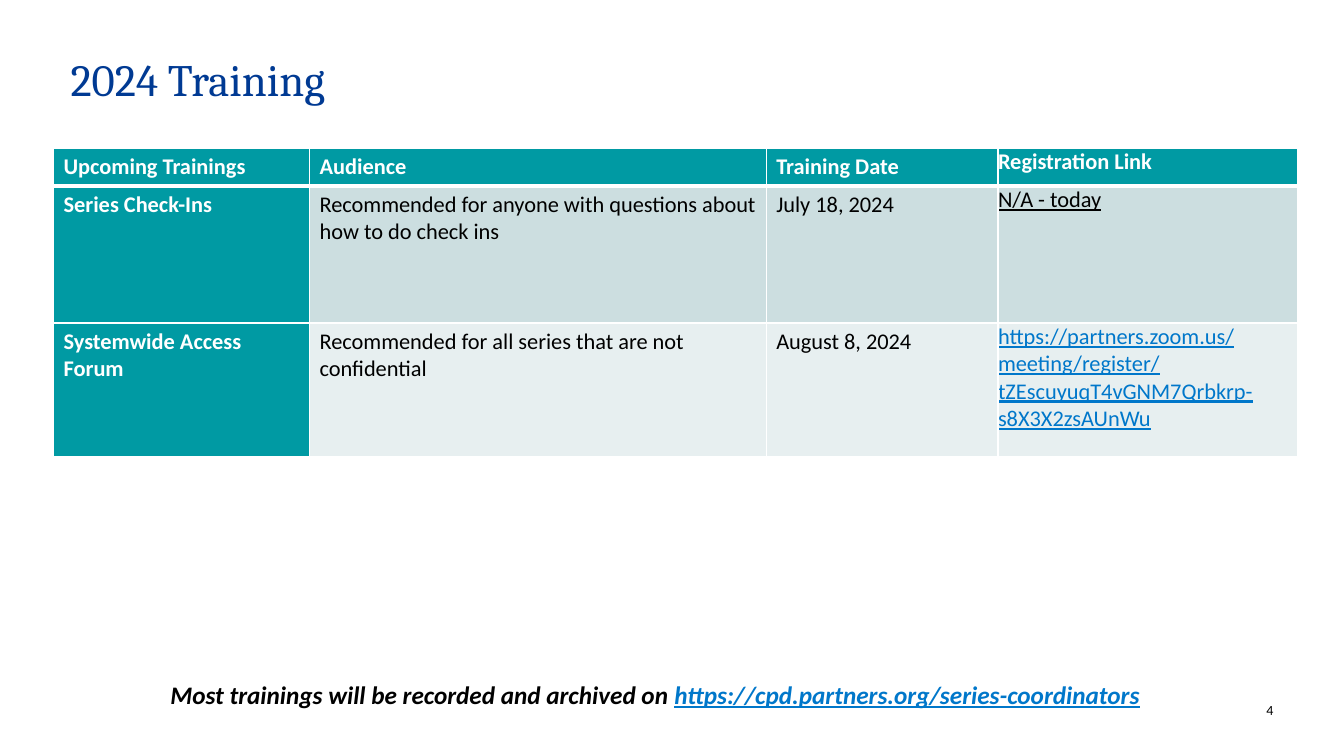
from dataclasses import dataclass

import pptx
import pptx.dml.color
import pptx.enum.text
import pptx.oxml.ns
import pptx.util
from lxml import etree


@dataclass(frozen=True)
class Theme:
    title_font: str = "Cambria"
    body_font: str = "Calibri"
    title_size: int = 32
    note_size: int = 18
    table_size: int = 16
    number_size: int = 10
    navy: str = "003A93"
    teal: str = "009AA3"
    bands: tuple[str, str] = ("CCDEE0", "E7EFF0")
    link: str = "0077CA"
    black: str = "000000"
    white: str = "FFFFFF"


@dataclass(frozen=True)
class Box:
    """Place on the slide, in percent of its width and height."""
    left: float
    top: float
    width: float
    height: float


@dataclass(frozen=True)
class Training:
    name: str
    audience: str
    date: str
    registration: str


THEME = Theme()
WIDTH, HEIGHT = pptx.util.Inches(13.33), pptx.util.Inches(7.5)

TITLE_BOX = Box(5.25, 7.6, 89.42, 14)
TABLE_BOX = Box(3.98, 19.65, 92.56, 40.66)
NOTE_BOX = Box(11.93, 89.2, 73.67, 5.33)
NUMBER_BOX = Box(91.9, 92.8, 2.85, 2.27)
COLUMNS = (19.05, 33.98, 17.25, 22.28)
ROWS = (4.8, 18.13, 17.73)

HEADER = ("Upcoming Trainings", "Audience", "Training Date", "Registration Link")
TRAININGS = (
    Training("Series Check-Ins",
             "Recommended for anyone with questions about how to do check ins",
             "July 18, 2024", "N/A - today"),
    Training("Systemwide Access Forum",
             "Recommended for all series that are not confidential",
             "August 8, 2024",
             "https://partners.zoom.us/meeting/register/"
             "tZEscuyuqT4vGNM7Qrbkrp-s8X3X2zsAUnWu"),
)


def across(share: float) -> int:
    return round(WIDTH * share / 100)


def down(share: float) -> int:
    return round(HEIGHT * share / 100)


def place(box: Box) -> tuple[int, int, int, int]:
    return across(box.left), down(box.top), across(box.width), down(box.height)


def rgb(color: str) -> pptx.dml.color.RGBColor:
    return pptx.dml.color.RGBColor.from_string(color)


def style(r, size: int, color: str, font: str = THEME.body_font, bold: bool = False,
          italic: bool = False, underline: bool = False) -> None:
    r.font.name, r.font.size = font, pptx.util.Pt(size)
    r.font.bold, r.font.italic, r.font.underline = bold, italic, underline
    r.font.color.rgb = rgb(color)


def clear_margins(tf) -> None:
    tf.margin_left = tf.margin_top = tf.margin_right = tf.margin_bottom = 0


def set_borders(cell, top: int, bottom: int) -> None:
    tcPr = cell._tc.get_or_add_tcPr()
    for side, points in (("L", 1), ("R", 1), ("T", top), ("B", bottom)):
        ln = etree.SubElement(tcPr, pptx.oxml.ns.qn(f"a:ln{side}"),
                              w=str(pptx.util.Pt(points)))
        fill = etree.SubElement(ln, pptx.oxml.ns.qn("a:solidFill"))
        etree.SubElement(fill, pptx.oxml.ns.qn("a:srgbClr"), val=THEME.white)


def add_title(s, text: str) -> None:
    sp = s.shapes.title
    sp.left, sp.top, sp.width, sp.height = place(TITLE_BOX)
    tf = sp.text_frame
    clear_margins(tf)
    tf.vertical_anchor = pptx.enum.text.MSO_ANCHOR.TOP
    tf.text = text
    p = tf.paragraphs[0]
    p.alignment = pptx.enum.text.PP_ALIGN.LEFT
    p.line_spacing = 0.9
    style(p.runs[0], THEME.title_size, THEME.navy, THEME.title_font)


def add_trainings(s) -> None:
    rows = [HEADER] + [(t.name, t.audience, t.date, t.registration) for t in TRAININGS]
    table = s.shapes.add_table(len(rows), len(COLUMNS), *place(TABLE_BOX)).table
    for column, share in zip(table.columns, COLUMNS):
        column.width = across(share)
    for row, share in zip(table.rows, ROWS):
        row.height = down(share)

    for i, texts in enumerate(rows):
        for j, text in enumerate(texts):
            cell = table.cell(i, j)
            heading = i == 0 or j == 0
            registration = j == len(COLUMNS) - 1
            set_borders(cell, top=3 if i == 1 else 1, bottom=3 if i == 0 else 1)
            cell.fill.solid()
            cell.fill.fore_color.rgb = rgb(THEME.teal if heading else THEME.bands[i - 1])
            if registration:
                clear_margins(cell)
            cell.text_frame.text = text
            color = THEME.link if text.startswith("https") else THEME.black
            style(cell.text_frame.paragraphs[0].runs[0], THEME.table_size,
                  THEME.white if heading else color, bold=heading,
                  underline=registration and not heading)


def add_note(s, text: str, link: str) -> None:
    tf = s.shapes.add_textbox(*place(NOTE_BOX)).text_frame
    tf.word_wrap = False
    tf.text = text
    p = tf.paragraphs[0]
    p.add_run().text = link
    for r, color in zip(p.runs, (THEME.black, THEME.link)):
        style(r, THEME.note_size, color, bold=True, italic=True,
              underline=color == THEME.link)


def add_number(s, number: str) -> None:
    tf = s.shapes.add_textbox(*place(NUMBER_BOX)).text_frame
    clear_margins(tf)
    tf.word_wrap = True
    tf.text = number
    p = tf.paragraphs[0]
    p.alignment = pptx.enum.text.PP_ALIGN.RIGHT
    style(p.runs[0], THEME.number_size, THEME.black)


def main() -> None:
    prs = pptx.Presentation()
    prs.slide_width, prs.slide_height = WIDTH, HEIGHT
    s = prs.slides.add_slide(prs.slide_layouts.get_by_name("Title Only"))

    # Heading
    add_title(s, "2024 Training")

    # Schedule
    add_trainings(s)

    # Archive note and page number
    add_note(s, "Most trainings will be recorded and archived on ",
             "https://cpd.partners.org/series-coordinators")
    add_number(s, "4")

    prs.save("out.pptx")


if __name__ == "__main__":
    main()
